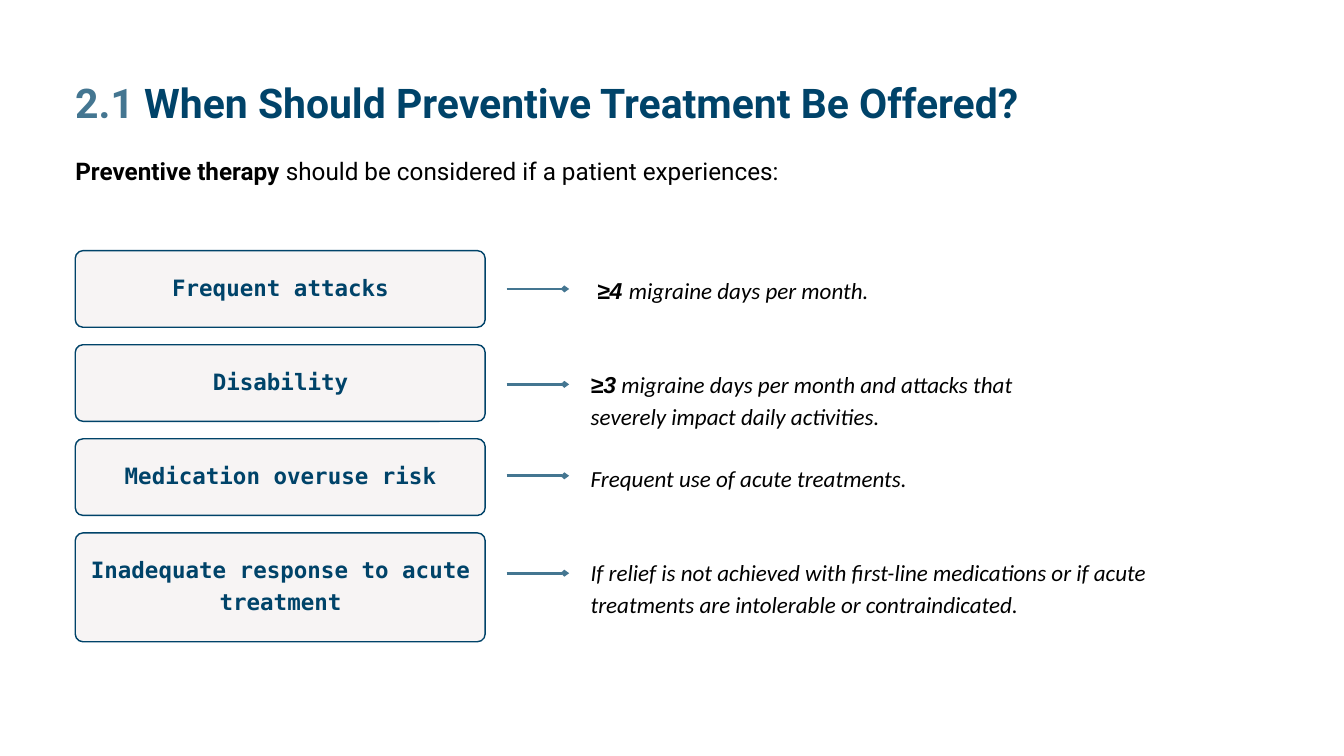
from lxml.etree import SubElement
from pptx import Presentation
from pptx.dml.color import RGBColor
from pptx.enum.shapes import MSO_CONNECTOR as CONN, MSO_SHAPE as SHAPE
from pptx.enum.text import PP_ALIGN as ALIGN
from pptx.oxml.ns import qn
from pptx.util import Inches, Pt

NAVY = RGBColor(0x00, 0x43, 0x69)
STEEL = RGBColor(0x44, 0x76, 0x91)
CARD_FILL = RGBColor(0xF7, 0xF4, 0xF4)
BLACK = RGBColor(0, 0, 0)

# Columns and rows of the grid, in inches
LEFT, CARD_W = 1.12, 6.1
LABEL_X, LABEL_W = 1.3, 5.75
ARROW_X1, ARROW_X2 = 7.54, 8.47
DETAIL_X = 8.79
TOP, PITCH = 3.73, 1.4
RADIUS = 0.115

prs = Presentation()
prs.slide_width, prs.slide_height = Inches(20), Inches(11.25)
s = prs.slides.add_slide(prs.slide_layouts[6])


def add_text(x, y, w, h, runs, size, leading, align=ALIGN.LEFT):
    """Add a one-paragraph box; runs are (text, font, colour, bold, italic)."""
    tf = s.shapes.add_textbox(Inches(x), Inches(y), Inches(w), Inches(h)).text_frame
    tf.word_wrap = True
    tf.margin_left = tf.margin_top = tf.margin_right = tf.margin_bottom = 0
    p = tf.paragraphs[0]
    p.alignment, p.line_spacing = align, Pt(leading)
    for text, font, colour, bold, italic in runs:
        r = p.add_run()
        r.text = text
        r.font.name, r.font.size = font, Pt(size)
        r.font.bold, r.font.italic = bold, italic
        r.font.color.rgb = colour


add_text(LEFT, 1.03, 16.34, 0.82, [
    ("2.1 ", "Roboto", STEEL, True, False),
    ("When Should Preventive Treatment Be Offered?", "Roboto", NAVY, True, False),
], 43.8, 61.2)
add_text(LEFT, 2.26, 15.01, 0.49, [
    ("Preventive therapy ", "Roboto", BLACK, True, False),
    ("should be considered if a patient experiences:", "Roboto", BLACK, False, False),
], 26, 36.4)

# label, threshold, detail, detail width, card height, text lines (label, detail), arrow y
criteria = [
    ("Frequent attacks", " ≥4 ", "migraine days per month.",
     7.16, 1.14, (1, 1), 4.3),
    ("Disability", "≥3",
     " migraine days per month and attacks that severely impact daily activities.",
     7.35, 1.14, (1, 2), 5.72),
    ("Medication overuse risk", "", "Frequent use of acute treatments.",
     11.05, 1.14, (1, 1), 7.08),
    ("Inadequate response to acute treatment", "",
     "If relief is not achieved with first-line medications or if acute "
     "treatments are intolerable or contraindicated.",
     8.33, 1.62, (2, 2), 8.53),
]

for row, (label, threshold, detail, detail_w, card_h, lines, arrow_y) in enumerate(criteria):
    y = TOP + row * PITCH

    card = s.shapes.add_shape(SHAPE.ROUNDED_RECTANGLE, Inches(LEFT), Inches(y),
                              Inches(CARD_W), Inches(card_h))
    card.adjustments[0] = RADIUS / card_h
    card.shadow.inherit = False
    card.fill.solid()
    card.fill.fore_color.rgb = CARD_FILL
    card.line.color.rgb = NAVY
    card.line.width = Pt(1.5)

    add_text(LABEL_X, y + 0.28, LABEL_W, 0.48 * lines[0],
             [(label, "DejaVu Sans Mono", NAVY, True, False)], 24.1, 33.8, ALIGN.CENTER)

    runs = [(detail, "Calibri", BLACK, False, True)]
    if threshold:
        runs.insert(0, (threshold, "Arial", BLACK, True, True))
    add_text(DETAIL_X, y + 0.31, detail_w, 0.465 * lines[1], runs, 24.7, 34.6)

    arrow = s.shapes.add_connector(CONN.STRAIGHT, Inches(ARROW_X1), Inches(arrow_y),
                                   Inches(ARROW_X2), Inches(arrow_y))
    arrow.line.color.rgb = STEEL
    arrow.line.width = Pt(3)
    SubElement(arrow.line._get_or_add_ln(), qn("a:tailEnd"), type="arrow", w="sm", len="sm")
    SubElement(arrow._element.spPr, qn("a:effectLst"))

prs.save("out.pptx")
